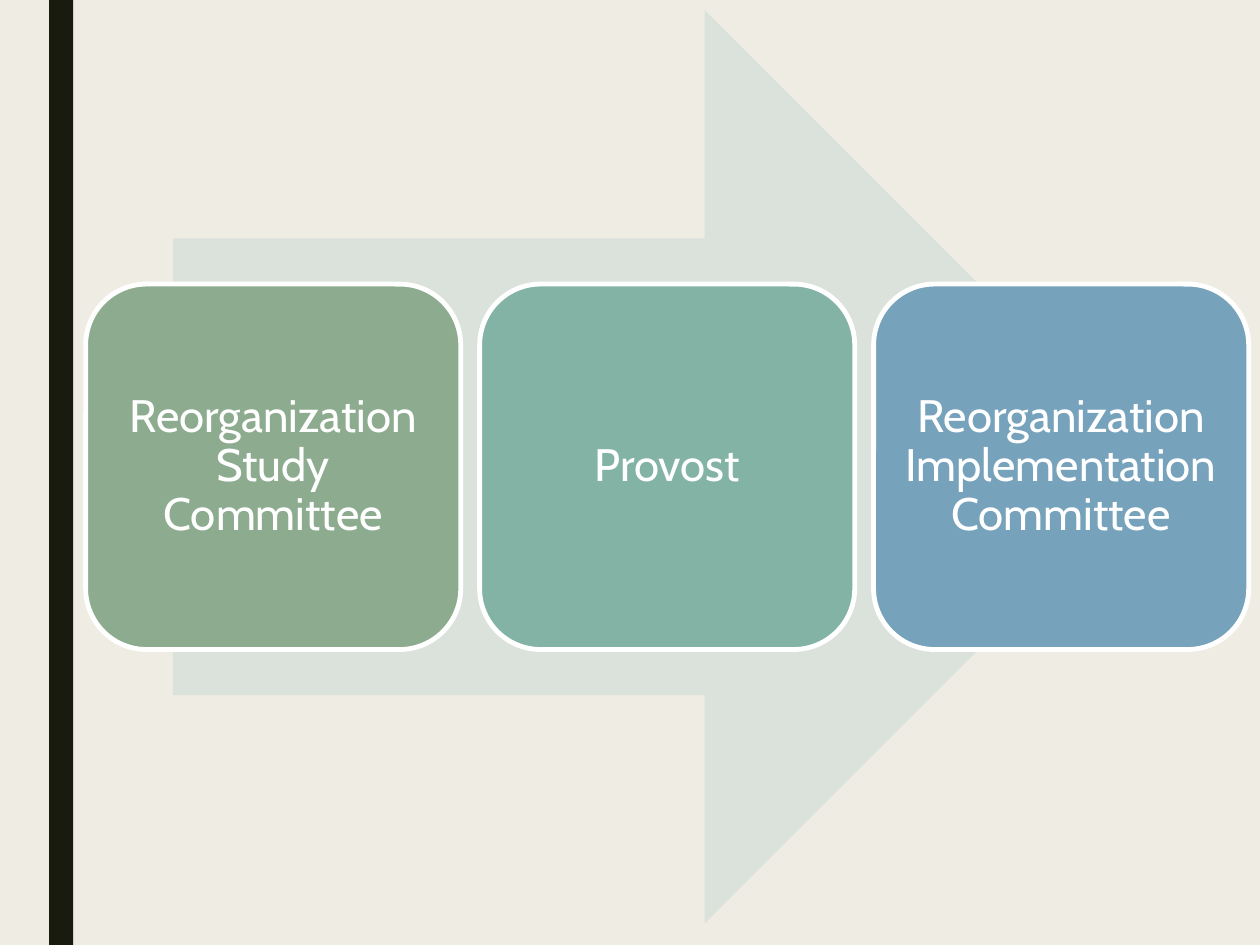
from pptx import Presentation
from pptx.dml.color import RGBColor
from pptx.enum.shapes import MSO_SHAPE as Shape
from pptx.enum.text import MSO_ANCHOR as Anchor, PP_ALIGN as Align
from pptx.util import Inches, Pt

BACKGROUND = RGBColor(0xEF, 0xED, 0xE3)
BAR = RGBColor(0x19, 0x1B, 0x0E)
ARROW = RGBColor(0xDB, 0xE2, 0xDB)
WHITE = RGBColor(0xFF, 0xFF, 0xFF)
GREEN = RGBColor(0x8D, 0xAB, 0x8E)
TEAL = RGBColor(0x82, 0xB3, 0xA4)
BLUE = RGBColor(0x77, 0xA2, 0xBB)

STEPS = [
    ("Reorganization Study Committee", GREEN),
    ("Provost", TEAL),
    ("Reorganization Implementation Committee", BLUE),
]


def add_filled(slide, kind, box, color):
    """Add a borderless preset shape in box (left, top, width, height in inches)."""
    shape = slide.shapes.add_shape(kind, *map(Inches, box))
    shape.shadow.inherit = False
    shape.fill.solid()
    shape.fill.fore_color.rgb = color
    shape.line.fill.background()
    return shape


def add_step(slide, box, label, color):
    card = add_filled(slide, Shape.ROUNDED_RECTANGLE, box, color)
    card.line.color.rgb = WHITE
    card.line.width = Pt(2.75)

    frame = card.text_frame
    frame.text = label
    frame.word_wrap = True
    frame.vertical_anchor = Anchor.MIDDLE
    frame.margin_left = frame.margin_right = Inches(0.11)
    frame.margin_top = frame.margin_bottom = Inches(0.11)
    paragraph = frame.paragraphs[0]
    paragraph.alignment = Align.CENTER
    paragraph.line_spacing = 0.9
    font = paragraph.runs[0].font
    font.name = "Cabin"
    font.size = Pt(26)
    font.color.rgb = WHITE


def add_process(slide, box, steps, gap=0.15):
    """Lay equal step cards across box, over a centred arrow of its full height."""
    left, top, width, height = box
    arrow_width = 0.85 * width
    arrow_left = left + (width - arrow_width) / 2
    add_filled(slide, Shape.RIGHT_ARROW, (arrow_left, top, arrow_width, height), ARROW)

    card_width = (width - gap * (len(steps) - 1)) / len(steps)
    card_height = 0.4 * height
    card_top = top + (height - card_height) / 2
    for column, (label, color) in enumerate(steps):
        card_left = left + column * (card_width + gap)
        add_step(slide, (card_left, card_top, card_width, card_height), label, color)


def main():
    presentation = Presentation()
    presentation.slide_width = Inches(10)
    presentation.slide_height = Inches(7.5)
    slide = presentation.slides.add_slide(presentation.slide_layouts[6])
    slide.background.fill.solid()
    slide.background.fill.fore_color.rgb = BACKGROUND

    add_filled(slide, Shape.RECTANGLE, (0.39, 0, 0.19, 7.5), BAR)
    add_process(slide, (0.68, 0.08, 9.23, 7.25), STEPS)
    presentation.save("out.pptx")


if __name__ == "__main__":
    main()
